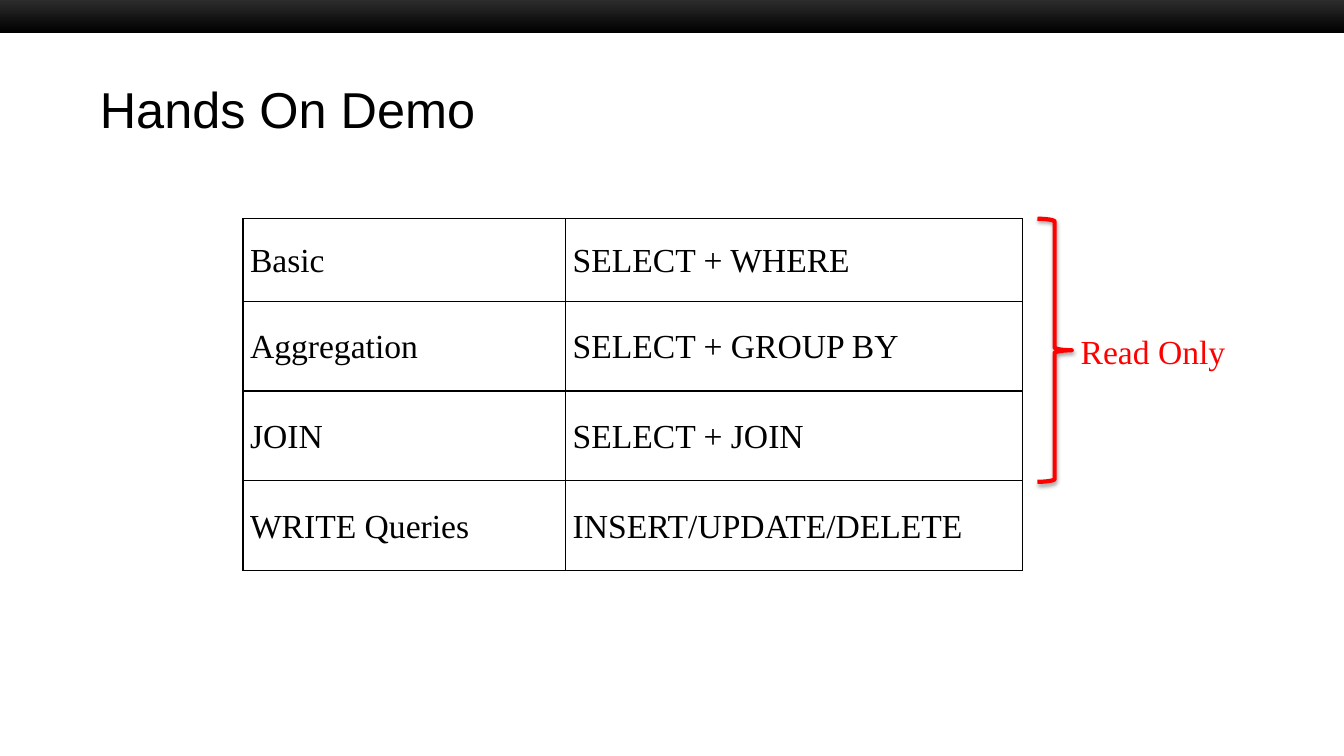
from lxml import etree
from pptx import Presentation
from pptx.dml.color import RGBColor
from pptx.enum.shapes import MSO_SHAPE
from pptx.enum.text import MSO_ANCHOR, PP_ALIGN
from pptx.oxml import parse_xml
from pptx.oxml.ns import nsdecls, qn
from pptx.util import Inches, Pt

BLACK = RGBColor(0x00, 0x00, 0x00)
CHARCOAL = RGBColor(0x33, 0x33, 0x33)
RED = RGBColor(0xFF, 0x00, 0x00)

ROWS = [
    ("Basic", "SELECT + WHERE"),
    ("Aggregation", "SELECT + GROUP BY"),
    ("JOIN", "SELECT + JOIN"),
    ("WRITE Queries", "INSERT/UPDATE/DELETE"),
]
COL_WIDTHS = [3.2, 4.53]
ROW_HEIGHTS = [0.82, 0.89, 0.89, 0.89]


def style_text(p, font_name, size, color):
    font = p.runs[0].font
    font.name = font_name
    font.size = Pt(size)
    font.color.rgb = color


def add_borders(cell):
    tcPr = cell._tc.get_or_add_tcPr()
    for i, side in enumerate(("lnL", "lnR", "lnT", "lnB")):
        ln = etree.Element(qn(f"a:{side}"), w=str(Pt(1)))
        fill = etree.SubElement(ln, qn("a:solidFill"))
        etree.SubElement(fill, qn("a:srgbClr"), val=str(BLACK))
        tcPr.insert(i, ln)


prs = Presentation()
prs.slide_width = Inches(13.33)
prs.slide_height = Inches(7.5)
slide = prs.slides.add_slide(prs.slide_layouts[5])

# Top band
band = slide.shapes.add_shape(
    MSO_SHAPE.RECTANGLE, 0, Inches(-0.05), prs.slide_width, Inches(0.38))
band.shadow.inherit = False
band.line.fill.background()
band.fill.gradient()
band.fill.gradient_angle = 270
for stop, color in zip(band.fill.gradient_stops, (CHARCOAL, BLACK)):
    stop.color.rgb = color

# Title
title = slide.shapes.title
title.left, title.top = Inches(0.89), Inches(0.7)
title.width, title.height = Inches(11.56), Inches(0.75)
tf = title.text_frame
tf.text = "Hands On Demo"
tf.vertical_anchor = MSO_ANCHOR.MIDDLE
tf.paragraphs[0].alignment = PP_ALIGN.LEFT
style_text(tf.paragraphs[0], "Arial", 36, BLACK)

# Query table
table = slide.shapes.add_table(
    len(ROWS), len(COL_WIDTHS), Inches(2.41), Inches(2.17),
    Inches(sum(COL_WIDTHS)), Inches(sum(ROW_HEIGHTS))).table
table.first_row = False
table.horz_banding = False
for column, width in zip(table.columns, COL_WIDTHS):
    column.width = Inches(width)
for row, height, texts in zip(table.rows, ROW_HEIGHTS, ROWS):
    row.height = Inches(height)
    for cell, text in zip(row.cells, texts):
        cell.fill.background()
        add_borders(cell)
        cell.vertical_anchor = MSO_ANCHOR.MIDDLE
        cell.margin_left = cell.margin_right = Inches(0.07)
        cell.margin_top = cell.margin_bottom = 0
        cell.text_frame.text = text
        p = cell.text_frame.paragraphs[0]
        p.alignment = PP_ALIGN.JUSTIFY
        p.line_spacing = 1.07
        style_text(p, "Times New Roman", 24, BLACK)

# Brace around the read-only rows
brace = slide.shapes.add_shape(
    MSO_SHAPE.RIGHT_BRACE, Inches(10.29), Inches(2.17), Inches(0.34), Inches(2.61))
brace.fill.background()
brace.line.color.rgb = RED
brace.line.width = Pt(3)
brace.shadow.inherit = False
brace._element.spPr.find(qn("a:effectLst")).append(parse_xml(
    f'<a:outerShdw {nsdecls("a")} blurRad="{Pt(3.1)}" dist="{Pt(1.6)}" '
    'dir="5400000" rotWithShape="0"><a:srgbClr val="000000">'
    '<a:alpha val="38000"/></a:srgbClr></a:outerShdw>'))

label = slide.shapes.add_textbox(
    Inches(10.62), Inches(3.23), Inches(1.71), Inches(0.5))
tf = label.text_frame
tf.word_wrap = True
tf.text = "Read Only"
style_text(tf.paragraphs[0], "Times New Roman", 24, RED)

prs.save("out.pptx")
